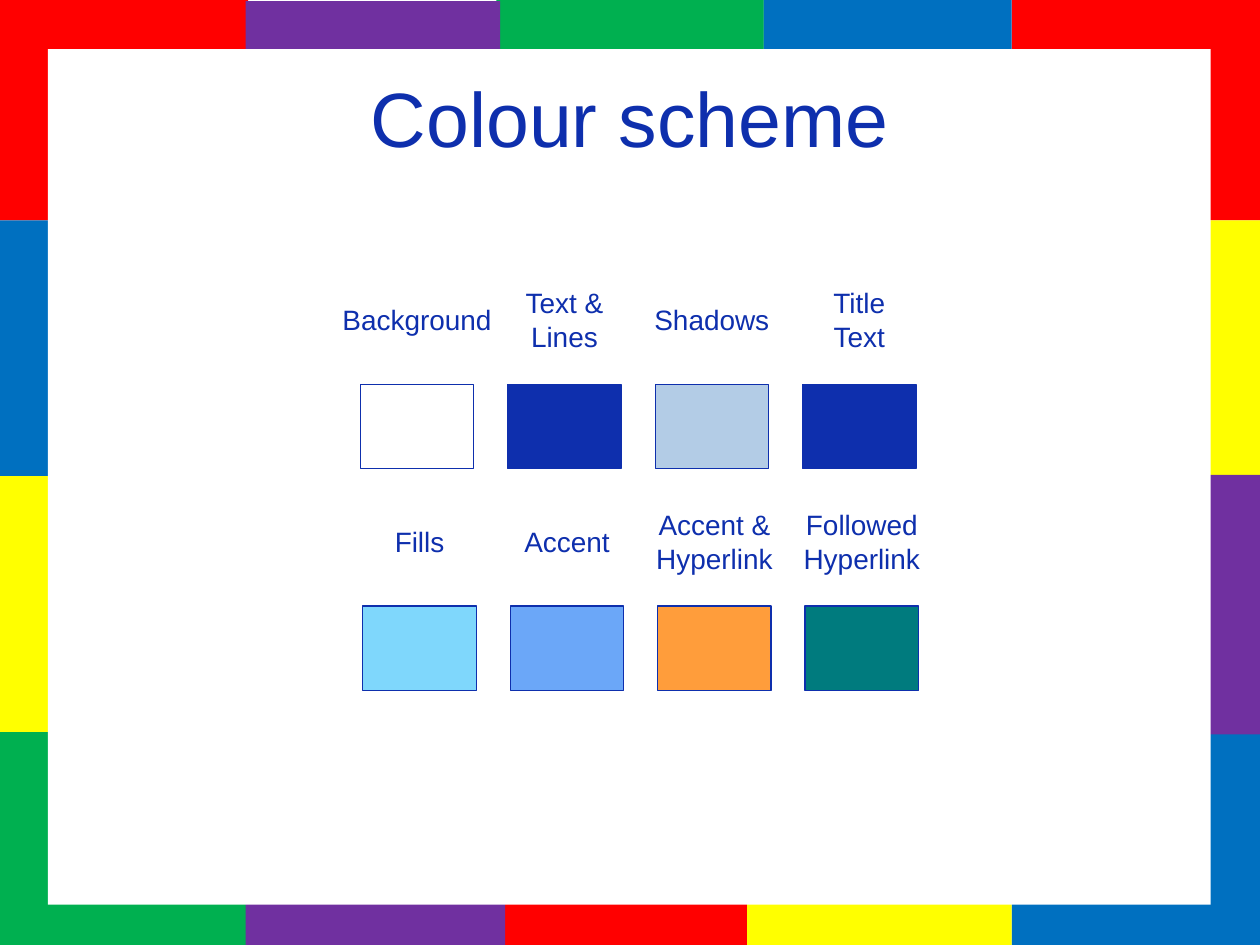
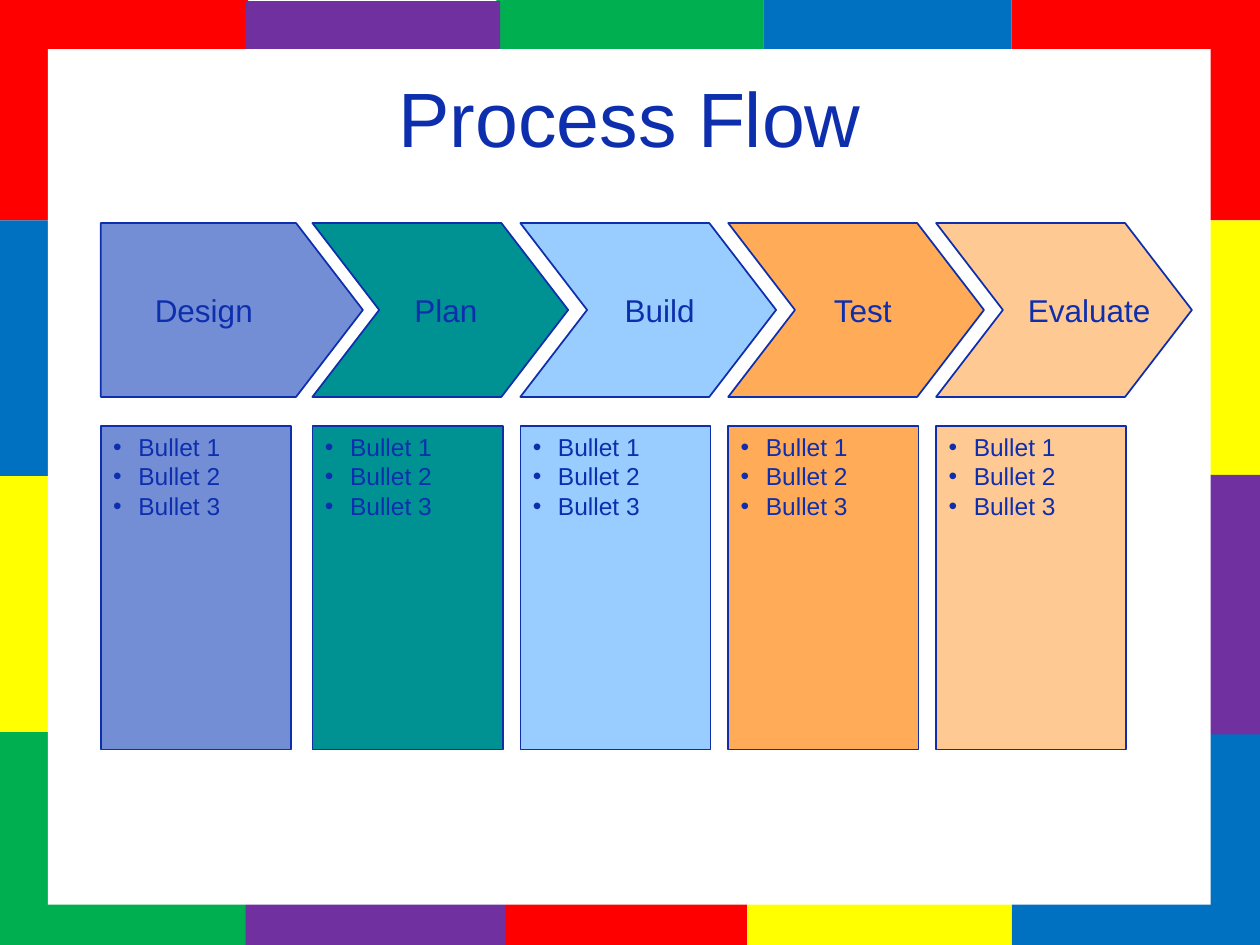
from dataclasses import dataclass
from typing import Any, NamedTuple

from lxml.etree import SubElement
from pptx import Presentation
from pptx.dml.color import RGBColor
from pptx.enum.shapes import MSO_SHAPE as Shape
from pptx.enum.text import MSO_ANCHOR as Anchor, MSO_AUTO_SIZE as AutoSize, PP_ALIGN as Align
from pptx.oxml.ns import qn
from pptx.util import Inches, Pt


@dataclass(frozen=True)
class Theme:
    font: str = "Arial"
    ink: str = "0E2FAD"
    paper: str = "FFFFFF"
    red: str = "FF0000"
    blue: str = "0070C0"
    green: str = "00B050"
    yellow: str = "FFFF00"
    purple: str = "7030A0"
    title_size: float = 44
    stage_size: float = 18
    label_size: float = 16
    bullet_size: float = 14
    swatch_line: float = 0.75
    stage_line: float = 1


THEME = Theme()


class Box(NamedTuple):
    left: float
    top: float
    width: float
    height: float

    def lengths(self) -> list[int]:
        return [Inches(value) for value in self]


class Tile(NamedTuple):
    box: Box
    fill: str


class Swatch(NamedTuple):
    label: str
    label_width: float
    fill: str


class SwatchRow(NamedTuple):
    left: float
    top: float
    swatches: list[Swatch]


class Stage(NamedTuple):
    name: str
    name_left: float
    name_width: float
    fill: str


FRAME = [
    Tile(Box(0, 0, 1.97, 1.75), THEME.red),
    Tile(Box(8.03, 0, 1.97, 1.75), THEME.red),
    Tile(Box(3.97, 5.82, 1.97, 1.75), THEME.red),
    Tile(Box(0, 1.75, 1.97, 2.03), THEME.blue),
    Tile(Box(8.03, 5.81, 1.97, 1.76), THEME.blue),
    Tile(Box(6.06, 0, 1.97, 1.75), THEME.blue),
    Tile(Box(3.94, -0.01, 2.12, 1.75), THEME.green),
    Tile(Box(-0.01, 5.81, 1.97, 1.76), THEME.green),
    Tile(Box(0, 3.78, 1.97, 2.03), THEME.yellow),
    Tile(Box(5.93, 5.81, 2.1, 1.76), THEME.yellow),
    Tile(Box(8.03, 1.75, 1.97, 2.03), THEME.yellow),
    Tile(Box(8.03, 3.77, 1.98, 2.06), THEME.purple),
    Tile(Box(1.95, 0.01, 2.02, 1.73), THEME.purple),
    Tile(Box(1.95, 5.82, 2.06, 1.73), THEME.purple),
    Tile(Box(0.38, 0.39, 9.23, 6.79), THEME.paper),
]
TITLE_BOX = Box(0.5, 0.3, 9, 1.25)

SWATCH_WIDTH, SWATCH_HEIGHT, SWATCH_STEP = 0.9, 0.67, 1.17
LABEL_RISE = 0.51  # from the middle of a label down to its swatch
LABEL_HEIGHTS = {1: 0.37, 2: 0.64}  # by number of lines
SCHEME = [
    SwatchRow(2.86, 3.05, [
        Swatch("Background", 1.4, THEME.paper),
        Swatch("Text &\nLines", 0.86, THEME.ink),
        Swatch("Shadows", 1.13, "B3CCE6"),
        Swatch("Title\vText", 0.65, THEME.ink),
    ]),
    SwatchRow(2.88, 4.81, [
        Swatch("Fills", 0.62, "7FD7FC"),
        Swatch("Accent", 0.9, "6BA7F8"),
        Swatch("Accent &\nHyperlink", 1.15, "FF9D3B"),
        Swatch("Followed\nHyperlink", 1.15, "007B7E"),
    ]),
]

FIRST_STAGE_LEFT, SECOND_STAGE_LEFT, STAGE_STEP = 0.8, 2.48, 1.65
ARROW_TOP, ARROW_HEIGHT, ARROW_BODY, ARROW_TIP = 1.77, 1.38, 1.5, 0.53
FIRST_ARROW_EXTRA = 0.05
DETAIL_TOP, DETAIL_WIDTH, DETAIL_HEIGHT = 3.38, 1.51, 2.57
BULLET_INDENT = 0.2
BULLETS = "\n".join(f"Bullet {number}" for number in range(1, 4))
STAGES = [
    Stage("Design", 1.13, 0.98, "748ED6"),
    Stage("Plan", 3.19, 0.7, "009193"),
    Stage("Build", 4.86, 0.76, "99CCFF"),
    Stage("Test", 6.52, 0.69, "FFAB57"),
    Stage("Evaluate", 8.06, 1.17, "FFC993"),
]


def set_all(target: Any, values: dict[str, Any]) -> None:
    for attribute, value in values.items():
        setattr(target, attribute, value)


def paint(shape: Any, fill: str, line_width: float = 0) -> None:
    """Give a flat fill, and an ink outline when a width is given."""
    shape.shadow.inherit = False
    shape.fill.solid()
    shape.fill.fore_color.rgb = RGBColor.from_string(fill)
    if line_width:
        shape.line.color.rgb = RGBColor.from_string(THEME.ink)
        shape.line.width = Pt(line_width)
    else:
        shape.line.fill.background()


def add_rectangle(slide: Any, box: Box, fill: str, line_width: float = 0) -> Any:
    rectangle = slide.shapes.add_shape(Shape.RECTANGLE, *box.lengths())
    paint(rectangle, fill, line_width)
    return rectangle


def write(frame: Any, text: str, size: float, align: Any, **frame_format: Any) -> None:
    frame.text = text
    set_all(frame, frame_format)
    for paragraph in frame.paragraphs:
        paragraph.alignment = align
        for run in paragraph.runs:
            set_all(run.font, {"name": THEME.font, "size": Pt(size)})
            run.font.color.rgb = RGBColor.from_string(THEME.ink)


def add_label(slide: Any, box: Box, text: str, size: float, align: Any) -> None:
    frame = slide.shapes.add_textbox(*box.lengths()).text_frame
    write(frame, text, size, align, word_wrap=False, auto_size=AutoSize.SHAPE_TO_FIT_TEXT)


def add_bullets(frame: Any) -> None:
    for paragraph in frame.paragraphs:
        properties = paragraph._p.get_or_add_pPr()
        properties.set("marL", str(Inches(BULLET_INDENT)))
        properties.set("indent", str(-Inches(BULLET_INDENT)))
        SubElement(properties, qn("a:buFont"), typeface=THEME.font)
        SubElement(properties, qn("a:buChar"), char="•")


def add_framed_slide(deck: Any, title: str) -> Any:
    slide = deck.slides.add_slide(deck.slide_layouts[6])
    for tile in FRAME:
        add_rectangle(slide, tile.box, tile.fill)
    heading = slide.shapes.add_textbox(*TITLE_BOX.lengths()).text_frame
    write(heading, title, THEME.title_size, Align.CENTER,
          word_wrap=True, vertical_anchor=Anchor.MIDDLE)
    return slide


def add_swatch(slide: Any, swatch: Swatch, left: float, top: float) -> None:
    """Draw a colour sample with its label centred above it."""
    add_rectangle(slide, Box(left, top, SWATCH_WIDTH, SWATCH_HEIGHT),
                  swatch.fill, THEME.swatch_line)
    height = LABEL_HEIGHTS[len(swatch.label.splitlines())]
    label_box = Box(left + (SWATCH_WIDTH - swatch.label_width) / 2,
                    top - LABEL_RISE - height / 2, swatch.label_width, height)
    add_label(slide, label_box, swatch.label, THEME.label_size, Align.CENTER)


def add_arrow(slide: Any, left: float, fill: str, is_first: bool) -> None:
    """Draw a stage arrow; only the first one has a flat back."""
    middle, bottom = ARROW_TOP + ARROW_HEIGHT / 2, ARROW_TOP + ARROW_HEIGHT
    shoulder = left + ARROW_BODY + (FIRST_ARROW_EXTRA if is_first else 0)
    outline = [(shoulder, ARROW_TOP), (shoulder + ARROW_TIP, middle),
               (shoulder, bottom), (left, bottom)]
    if not is_first:
        outline.append((left + ARROW_TIP, middle))
    builder = slide.shapes.build_freeform(Inches(left), Inches(ARROW_TOP))
    builder.add_line_segments([(Inches(x), Inches(y)) for x, y in outline], close=True)
    paint(builder.convert_to_shape(), fill, THEME.stage_line)


def add_stage(slide: Any, index: int, stage: Stage) -> None:
    is_first = index == 0
    left = FIRST_STAGE_LEFT if is_first else SECOND_STAGE_LEFT + (index - 1) * STAGE_STEP
    detail = add_rectangle(slide, Box(left, DETAIL_TOP, DETAIL_WIDTH, DETAIL_HEIGHT),
                           stage.fill, THEME.stage_line)
    write(detail.text_frame, BULLETS, THEME.bullet_size, Align.LEFT,
          word_wrap=True, vertical_anchor=Anchor.TOP)
    add_bullets(detail.text_frame)
    add_arrow(slide, left, stage.fill, is_first)
    add_label(slide, Box(stage.name_left, 2.26, stage.name_width, 0.4),
              stage.name, THEME.stage_size, Align.LEFT)


def add_colour_scheme(deck: Any) -> None:
    slide = add_framed_slide(deck, "Colour scheme")
    for row in SCHEME:
        for column, swatch in enumerate(row.swatches):
            add_swatch(slide, swatch, row.left + column * SWATCH_STEP, row.top)


def add_process_flow(deck: Any) -> None:
    slide = add_framed_slide(deck, "Process Flow")
    for index, stage in enumerate(STAGES):
        add_stage(slide, index, stage)


def main() -> None:
    deck = Presentation()
    set_all(deck, {"slide_width": Inches(10), "slide_height": Inches(7.5)})
    add_colour_scheme(deck)
    add_process_flow(deck)
    deck.save("out.pptx")


if __name__ == "__main__":
    main()
